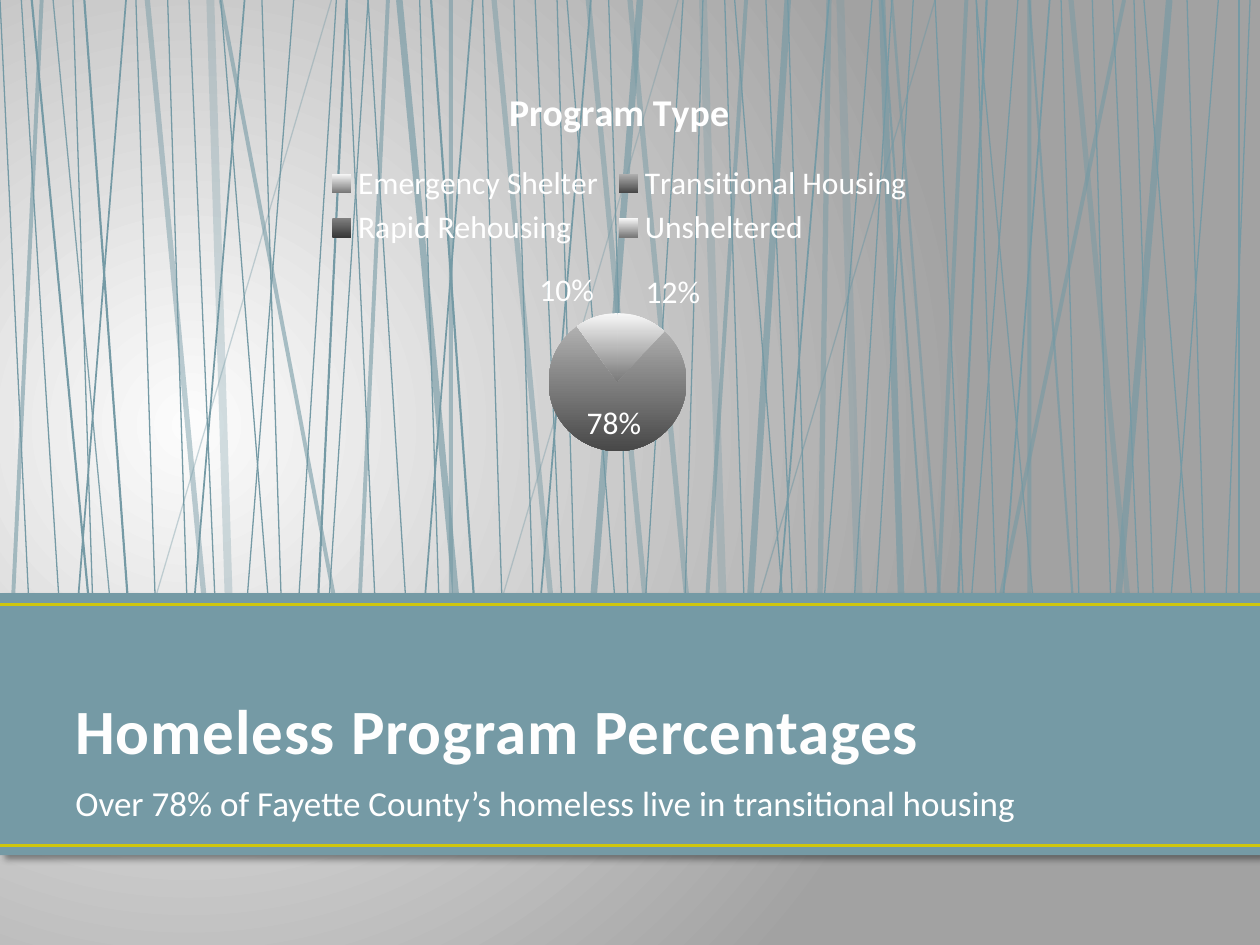
from lxml import etree
from pptx import Presentation
from pptx.chart.data import CategoryChartData
from pptx.dml.color import RGBColor
from pptx.enum.chart import XL_CHART_TYPE, XL_LABEL_POSITION, XL_LEGEND_POSITION
from pptx.enum.shapes import MSO_CONNECTOR, MSO_SHAPE
from pptx.enum.text import MSO_ANCHOR
from pptx.oxml import parse_xml
from pptx.oxml.ns import nsdecls, qn
from pptx.util import Cm, Pt

PIE = XL_CHART_TYPE.PIE
BEST_FIT = XL_LABEL_POSITION.BEST_FIT
LEGEND_TOP = XL_LEGEND_POSITION.TOP
STRAIGHT = MSO_CONNECTOR.STRAIGHT
RECTANGLE = MSO_SHAPE.RECTANGLE
TOP, BOTTOM = MSO_ANCHOR.TOP, MSO_ANCHOR.BOTTOM

WHITE = RGBColor(0xFF, 0xFF, 0xFF)
NEAR_WHITE = RGBColor(0xFE, 0xFE, 0xFE)
TEAL = RGBColor(0x75, 0x9A, 0xA5)
LIME = RGBColor(0xCF, 0xC6, 0x0D)
GLOW = RGBColor(0xFC, 0xFC, 0xFC)
GREY = RGBColor(0xA2, 0xA2, 0xA2)
PALE = RGBColor(0xF8, 0xF8, 0xF8)
MIDDLE = RGBColor(0x78, 0x78, 0x78)
SILVER = RGBColor(0xB0, 0xB0, 0xB0)
DARK = RGBColor(0x48, 0x48, 0x48)
STEEL = RGBColor(0x80, 0x80, 0x80)
COAL = RGBColor(0x38, 0x38, 0x38)

PAGE_WIDTH, PAGE_HEIGHT = 25.4, 19.05
STRAND_END = 13.39

# (width in points, opacity in percent): (top, bottom) in percent of page width
STRANDS = {
    (0.75, 100): [
        (20.8, 22.5), (17.5, 21.7), (23.3, 19.2), (0, 2.5), (1.7, 5), (5.8, 7.5),
        (26.7, 23.4), (29.2, 25.8), (15, 17.3), (10.8, 12.5), (13.3, 15),
        (48.3, 50), (45, 49.2), (27.5, 30), (29.2, 32.5), (44.2, 45.8),
        (33.3, 35), (54.2, 50.9), (55.8, 54.2), (42.5, 44.8), (38.3, 40),
        (40.8, 42.5), (58.3, 62.5), (69.2, 65), (62.5, 64.2), (72.5, 69.2),
        (70.8, 67.5), (60.8, 63.1), (57.5, 59.2), (74.2, 76.7), (77.5, 79.2),
        (84.2, 85.8), (86.7, 88.3), (94.2, 95.8), (90.8, 95), (96.7, 92.5),
        (90, 91.7), (99.2, 97.1), (88.3, 90.6), (80.8, 76.7)],
    (0.75, 90): [(4.2, 9.2), (77.5, 82.5)],
    (0.75, 56): [(74.2, 58.7)],
    (0.75, 39): [(26.3, 10.8), (53.8, 38.3)],
    (1, 100): [(10, 5.8), (19.4, 15), (37.5, 33.3), (46.9, 42.5), (65.8, 61.4),
               (83.3, 79.2)],
    (1.25, 100): [(2.5, 7.5), (6.7, 10.5), (27.5, 25), (34.2, 38), (78.3, 75.8),
                  (98.3, 98.3)],
    (1.25, 72): [(81.7, 85.5), (70, 73.9)],
    (1.5, 58): [(70.8, 75)],
    (2.25, 58): [(3.3, 0.8), (17.5, 27.5), (30.8, 28.3), (35.8, 35.8),
                 (59.2, 55.8), (76.7, 74.2), (81.7, 81.7), (89.2, 78.3)],
    (3, 47): [(11.7, 16.7), (39.2, 44.2), (46.7, 51.7), (85, 90), (65.8, 65),
              (50, 55)],
    (3.75, 63): [(50.8, 46.7), (31.7, 36.7), (92.8, 88.3), (70, 71.7),
                 (62.5, 59.2)],
    (4.5, 30): [(16.7, 18.3), (66.7, 68.3), (55.8, 57.5)],
}

PROGRAMS = [  # name, percent, gradient from top to bottom
    ("Emergency Shelter", 12, (PALE, MIDDLE)),
    ("Transitional Housing", 78, (SILVER, DARK)),
    ("Rapid Rehousing", 0, (STEEL, COAL)),
    ("Unsheltered", 10, (PALE, MIDDLE)),
]


def blend(fill, colors, angle=270):
    fill.gradient()
    fill.gradient_angle = angle
    for stop, color, position in zip(fill.gradient_stops, colors, (0, 1)):
        stop.color.rgb = color
        stop.position = position


def write(frame, text, size, color=WHITE, bold=False, spacing=0, anchor=TOP):
    frame.word_wrap = True
    frame.vertical_anchor = anchor
    span = frame.paragraphs[0].add_run()
    span.text = text
    style_font(span.font, size, color, bold)
    if spacing:
        span.font._element.set("spc", str(int(spacing * 100)))


def style_font(font, size, color=WHITE, bold=False):
    font.name = "Calibri"
    font.size = Pt(size)
    font.bold = bold
    font.color.rgb = color


class Page:
    def __init__(self, deck):
        self.slide = deck.slides.add_slide(deck.slide_layouts[6])
        self.shapes = self.slide.shapes

    def background(self, colors):
        """Radial gradient centred left of the middle."""
        fill = self.slide.background.fill
        blend(fill, colors)
        linear = next(self.slide._element.iter(qn("a:lin")))
        radial = parse_xml(
            f'<a:path {nsdecls("a")} path="circle">'
            '<a:fillToRect l="15000" t="50000" r="85000" b="60000"/></a:path>')
        linear.getparent().replace(linear, radial)

    def line(self, start, end, color, width, opacity=100):
        line = self.shapes.add_connector(
            STRAIGHT, *(Cm(round(value, 2)) for value in (*start, *end)))
        line.line.color.rgb = color
        line.line.width = Pt(width)
        properties = line._element.spPr
        if opacity < 100:
            tint = next(properties.iter(qn("a:srgbClr")))
            etree.SubElement(tint, qn("a:alpha"), val=str(opacity * 1000))
        etree.SubElement(properties, qn("a:effectLst"))

    def band(self, top, height, color):
        """Full-width bar with a soft shadow."""
        bar = self.shapes.add_shape(
            RECTANGLE, 0, Cm(top), Cm(PAGE_WIDTH), Cm(height))
        bar.fill.solid()
        bar.fill.fore_color.rgb = color
        bar.line.fill.background()
        bar._element.spPr.append(parse_xml(
            f'<a:effectLst {nsdecls("a")}><a:outerShdw blurRad="50800" '
            'dist="38100" dir="2700000" algn="tl" rotWithShape="0">'
            '<a:srgbClr val="000000"><a:alpha val="40000"/></a:srgbClr>'
            '</a:outerShdw></a:effectLst>'))

    def text(self, left, top, width, height, text, **style):
        box = self.shapes.add_textbox(Cm(left), Cm(top), Cm(width), Cm(height))
        write(box.text_frame, text, **style)

    def pie(self, left, top, width, height, title, programs):
        data = CategoryChartData()
        data.categories = [name for name, _, _ in programs]
        data.add_series(title, [percent for _, percent, _ in programs])
        chart = self.shapes.add_chart(
            PIE, Cm(left), Cm(top), Cm(width), Cm(height), data).chart
        style_font(chart.font, 18)
        chart.has_title = True
        write(chart.chart_title.text_frame, title, 21.6, bold=True)
        chart.chart_title.include_in_layout = False
        chart.has_legend = True
        chart.legend.position = LEGEND_TOP
        chart.legend.include_in_layout = False
        style_font(chart.legend.font, 18)
        plot = chart.plots[0]
        plot.vary_by_categories = True
        series = plot.series[0]
        labels = series.data_labels
        labels.show_percentage = True
        labels.show_value = False
        labels.number_format = "0%"
        labels.number_format_is_linked = False
        labels.position = BEST_FIT
        style_font(labels.font, 18)
        for index, (_, percent, colors) in enumerate(programs):
            blend(series.points[index].format.fill, colors)
            if not percent:
                labels._element.insert(0, parse_xml(
                    f'<c:dLbl {nsdecls("c")}><c:idx val="{index}"/>'
                    '<c:delete val="1"/></c:dLbl>'))


def main():
    deck = Presentation()
    deck.slide_width, deck.slide_height = Cm(PAGE_WIDTH), Cm(PAGE_HEIGHT)
    page = Page(deck)
    page.background((GLOW, GREY))
    for (width, opacity), strands in STRANDS.items():
        for top, bottom in strands:
            page.line((top * PAGE_WIDTH / 100, 0),
                      (bottom * PAGE_WIDTH / 100, STRAND_END),
                      TEAL, width, opacity)
    page.band(11.96, 5.28, TEAL)
    for height in (12.19, 17.04):
        page.line((0, height), (PAGE_WIDTH, height), LIME, 1.5)
    page.text(1.27, 15.62, 23.06, 1.14,
              "Over 78% of Fayette County’s homeless live in transitional housing",
              size=20)
    page.text(1.27, 12.4, 23.06, 3.18, "Homeless Program Percentages",
              size=36, color=NEAR_WHITE, bold=True, spacing=0.5, anchor=BOTTOM)
    page.pie(3.81, 1.27, 17.35, 9.09, "Program Type", PROGRAMS)
    deck.save("out.pptx")


if __name__ == "__main__":
    main()
